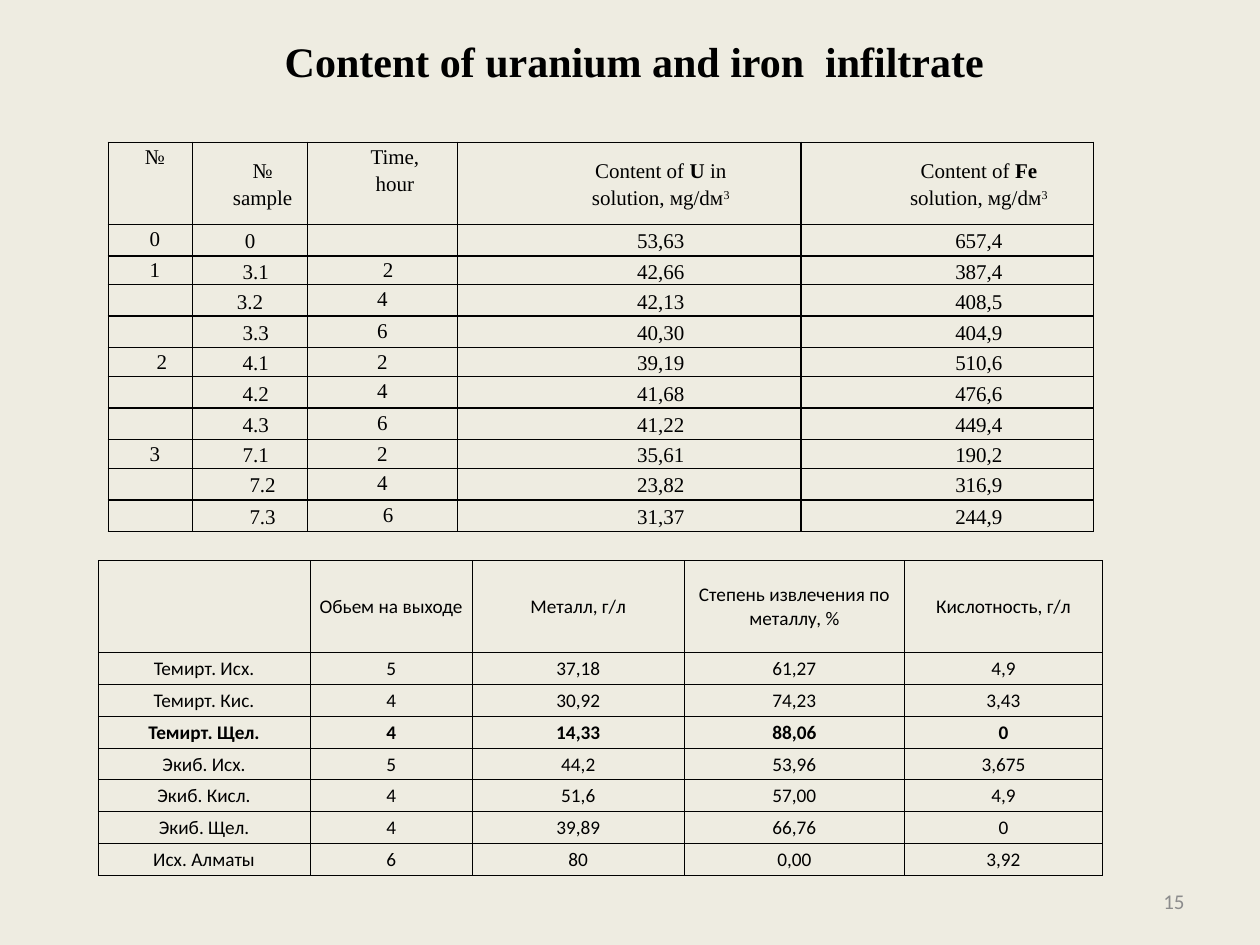
import pptx
import pptx.dml.color
import pptx.enum.text
import pptx.oxml
import pptx.oxml.ns
import pptx.util
from lxml import etree

ALIGN = pptx.enum.text.PP_ALIGN
ANCHOR = pptx.enum.text.MSO_ANCHOR
BLACK = "000000"
SERIF = "Times New Roman"
SANS = "Calibri"
WIDTH = pptx.util.Inches(10)
HEIGHT = pptx.util.Inches(7.5)
HANGING_MARGIN = 0.5

FILTRATE_COLUMNS = [6.7, 9.1, 11.9, 27.3, 23.2]
FILTRATE_ROWS = [8.67] + [3.33, 3.07, 3.33] * 3 + [3.33]
FILTRATE = [
    ["№", "№ sample", "Time,\nhour", "", ""],
    ["0", "0", "", "53,63", "657,4"],
    ["1", "3.1", "2", "42,66", "387,4"],
    ["", "3.2", "4", "42,13", "408,5"],
    ["", "3.3", "6", "40,30", "404,9"],
    ["2", "4.1", "2", "39,19", "510,6"],
    ["", "4.2", "4", "41,68", "476,6"],
    ["", "4.3", "6", "41,22", "449,4"],
    ["3", "7.1", "2", "35,61", "190,2"],
    ["", "7.2", "4", "23,82", "316,9"],
    ["", "7.3", "6", "31,37", "244,9"],
]
COLUMN_INDENTS = [-0.43, -0.41, -0.5, 0, 0]
CELL_INDENTS = {
    (0, 1): 0, (0, 2): -0.3, (1, 1): -0.5, (2, 2): -0.41, (3, 1): -0.5,
    (5, 0): -0.32, (9, 1): -0.3, (10, 1): -0.3, (10, 2): -0.41,
}

METAL_COLUMNS = [16.8, 12.9, 16.8, 17.5, 15.7]
METAL_ROWS = [9.73] + [3.37] * 7
METAL = [
    ["", "Обьем на выходе", "Металл, г/л", "Степень извлечения по металлу, %", "Кислотность, г/л"],
    ["Темирт. Исх.", "5", "37,18", "61,27", "4,9"],
    ["Темирт. Кис.", "4", "30,92", "74,23", "3,43"],
    ["Темирт. Щел.", "4", "14,33", "88,06", "0"],
    ["Экиб. Исх.", "5", "44,2", "53,96", "3,675"],
    ["Экиб. Кисл.", "4", "51,6", "57,00", "4,9"],
    ["Экиб. Щел.", "4", "39,89", "66,76", "0"],
    ["Исх. Алматы", "6", "80", "0,00", "3,92"],
]
BOLD_METAL_ROW = 3


def across(percent):
    return round(WIDTH * percent / 100)


def down(percent):
    return round(HEIGHT * percent / 100)


def color(value):
    return pptx.dml.color.RGBColor.from_string(value)


def style_run(run, font, size, ink=BLACK, bold=False):
    run.font.name = font
    run.font.size = pptx.util.Pt(size)
    run.font.color.rgb = color(ink)
    run.font.bold = bold


def style_frame(text_frame, align, font, size, ink=BLACK, bold=False):
    for paragraph in text_frame.paragraphs:
        paragraph.alignment = align
        for run in paragraph.runs:
            style_run(run, font, size, ink, bold)
        if not paragraph.runs:
            end = etree.SubElement(paragraph._p, pptx.oxml.ns.qn("a:endParaRPr"))
            end.set("sz", str(size * 100))


def indent_paragraph(paragraph, margin, indent):
    properties = paragraph._p.get_or_add_pPr()
    properties.set("marL", str(pptx.util.Inches(margin)))
    properties.set("indent", str(pptx.util.Inches(indent)))


def border_cell(cell, points):
    properties = cell._tc.get_or_add_tcPr()
    namespace = pptx.oxml.ns.nsdecls("a")
    for side in ("lnL", "lnR", "lnT", "lnB"):
        properties.append(pptx.oxml.parse_xml(
            f'<a:{side} {namespace} w="{pptx.util.Pt(points)}"><a:solidFill>'
            f'<a:srgbClr val="{BLACK}"/></a:solidFill></a:{side}>'))
    cell.fill.background()


def add_grid(slide, left, top, columns, rows, values, border, insets):
    frame = slide.shapes.add_table(
        len(rows), len(columns), across(left), down(top),
        across(sum(columns)), down(sum(rows)))
    table = frame.table
    table.first_row = False
    table.horz_banding = False
    for column, width in zip(table.columns, columns):
        column.width = across(width)
    for row, height, texts in zip(table.rows, rows, values):
        row.height = down(height)
        for cell, text in zip(row.cells, texts):
            cell.margin_left, cell.margin_top, cell.margin_right, cell.margin_bottom = (
                pptx.util.Inches(inset) for inset in insets)
            cell.vertical_anchor = ANCHOR.MIDDLE
            cell.text_frame.text = text
            border_cell(cell, border)
    return table


def write_content_heading(cell, element, ending):
    first = cell.text_frame.paragraphs[0]
    second = cell.text_frame.add_paragraph()
    first.text = "Content of "
    first.add_run().text = element
    if ending:
        first.add_run().text = ending
    second.text = "solution, мg/dм"
    second.add_run().text = "3"
    style_frame(cell.text_frame, ALIGN.CENTER, SERIF, 12)
    first.runs[1].font.bold = True
    second.runs[1].font._element.set("baseline", "30000")


def add_filtrate_table(slide):
    table = add_grid(slide, 8.6, 15.07, FILTRATE_COLUMNS, FILTRATE_ROWS,
                     FILTRATE, 1, (0.03, 0, 0.03, 0))
    write_content_heading(table.cell(0, 3), "U ", "in")
    write_content_heading(table.cell(0, 4), "Fe", "")
    for row in range(len(FILTRATE_ROWS)):
        for column, column_indent in enumerate(COLUMN_INDENTS):
            cell = table.cell(row, column)
            if column in (0, 2):
                cell.vertical_anchor = ANCHOR.TOP
            if row > 0 or column < 3:
                style_frame(cell.text_frame, ALIGN.CENTER, SERIF, 12)
            margin = 0.2 if (row, column) == (0, 1) else HANGING_MARGIN
            indent = CELL_INDENTS.get((row, column), column_indent)
            for paragraph in cell.text_frame.paragraphs:
                paragraph.line_spacing = 1.15
                indent_paragraph(paragraph, margin, indent)


def add_metal_table(slide):
    table = add_grid(slide, 7.8, 59.33, METAL_COLUMNS, METAL_ROWS,
                     METAL, 0.5, (0.01, 0.01, 0.01, 0))
    for index, row in enumerate(table.rows):
        for cell in row.cells:
            style_frame(cell.text_frame, ALIGN.CENTER, SANS, 11,
                        bold=index == BOLD_METAL_ROW)


def set_title(slide, text):
    title = slide.shapes.title
    title.left, title.top = across(2.3), down(3.07)
    title.width, title.height = across(96.1), down(6.8)
    title.text_frame.text = text
    title.text_frame.vertical_anchor = ANCHOR.MIDDLE
    style_frame(title.text_frame, ALIGN.CENTER, SERIF, 24, bold=True)


def add_page_number(slide, text):
    box = slide.shapes.add_textbox(across(71.7), down(92.67), across(23.3), down(5.33))
    box.text_frame.word_wrap = True
    box.text_frame.vertical_anchor = ANCHOR.MIDDLE
    box.text_frame.text = text
    style_frame(box.text_frame, ALIGN.RIGHT, SANS, 12, "8C8C8C")


def main():
    presentation = pptx.Presentation()
    presentation.slide_width = WIDTH
    presentation.slide_height = HEIGHT
    slide = presentation.slides.add_slide(presentation.slide_layouts.get_by_name("Title Only"))
    slide.background.fill.solid()
    slide.background.fill.fore_color.rgb = color("EEECE1")
    set_title(slide, "Content of uranium and iron  infiltrate")
    add_filtrate_table(slide)
    add_metal_table(slide)
    add_page_number(slide, "15")
    presentation.save("out.pptx")


if __name__ == "__main__":
    main()
